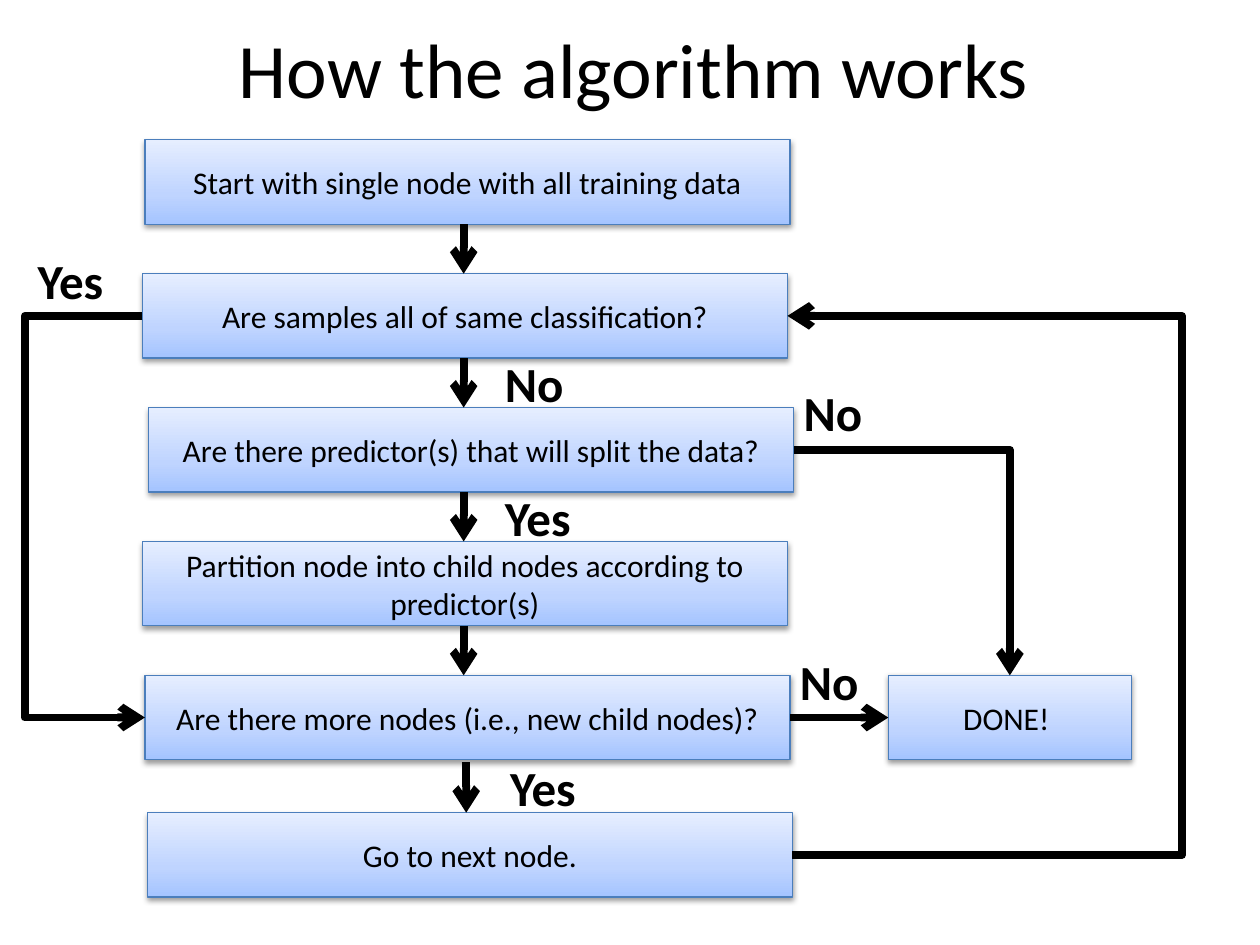
from typing import NamedTuple, Optional

from lxml.etree import SubElement
from pptx import Presentation
from pptx.dml.color import RGBColor
from pptx.enum.shapes import MSO_CONNECTOR, MSO_SHAPE
from pptx.enum.text import MSO_ANCHOR, MSO_AUTO_SIZE, PP_ALIGN
from pptx.oxml.ns import qn
from pptx.util import Inches, Pt

FONT = "Calibri"
BLACK = "000000"
BORDER = "4B7EBC"
GRADIENT = ((0, "A4C4FF"), (35, "BFD4FF"), (100, "E6EEFF"))
STEP_WIDTH, STEP_HEIGHT = 5.12, 0.67
FIRST_TOP, PITCH = 1.11, 1.0625
ARROW_X = 3.68
TOP, LEFT, BOTTOM, RIGHT = range(4)


class Step(NamedTuple):
    text: str
    left: float
    top: float
    width: float = STEP_WIDTH

    def side(self, site: int) -> tuple[float, float]:
        middle_x, middle_y = self.left + self.width / 2, self.top + STEP_HEIGHT / 2
        return ((middle_x, self.top), (self.left, middle_y),
                (middle_x, self.top + STEP_HEIGHT), (self.left + self.width, middle_y))[site]


class Answer(NamedTuple):
    text: str
    left: float
    top: float


class Route(NamedTuple):
    source: int
    source_side: int
    target: int
    target_side: int
    turn_x: Optional[float] = None  # None: a single corner


ROWS = [FIRST_TOP + PITCH * row for row in range(5)]
STEPS = [
    Step("Start with single node with all training data", 1.15, ROWS[0]),
    Step("Are samples all of same classification?", 1.13, ROWS[1]),
    Step("Are there predictor(s) that will split the data?", 1.18, ROWS[2]),
    Step("Partition node into child nodes according to predictor(s)", 1.13, ROWS[3]),
    Step("Are there more nodes (i.e., new child nodes)?", 1.15, ROWS[4]),
    Step("Go to next node.", 1.17, 6.45),
    Step("DONE! ", 7.05, ROWS[4], 1.93),
]
SAME_CLASS, SPLIT, MORE_NODES, NEXT_NODE, DONE = 1, 2, 4, 5, 6
ANSWERS = [
    Answer("Yes", 0.2, 1.94), Answer("No", 3.91, 2.76), Answer("No", 6.28, 2.99),
    Answer("Yes", 3.91, 3.82), Answer("No", 6.25, 5.12), Answer("Yes", 3.95, 5.96),
]
ROUTES = [
    Route(SAME_CLASS, LEFT, MORE_NODES, LEFT, 0.2),
    Route(SPLIT, RIGHT, DONE, TOP),
    Route(NEXT_NODE, RIGHT, SAME_CLASS, RIGHT, 9.37),
]


def color(value: str) -> RGBColor:
    return RGBColor.from_string(value)


def format_text(paragraph, size: float, bold: bool = False) -> None:
    for run in paragraph.runs:
        run.font.name, run.font.size, run.font.bold = FONT, Pt(size), bold
        run.font.color.rgb = color(BLACK)


def draw_step(slide, step: Step):
    box = slide.shapes.add_shape(MSO_SHAPE.RECTANGLE, Inches(step.left), Inches(step.top),
                                 Inches(step.width), Inches(STEP_HEIGHT))
    box.line.color.rgb = color(BORDER)
    box.line.width = Pt(0.75)

    # Three-stop gradient running upwards
    box.fill.gradient()
    box.fill.gradient_angle = 90
    stops = box.element.spPr.find(".//" + qn("a:gsLst"))
    stops.clear()
    for position, value in GRADIENT:
        stop = SubElement(stops, qn("a:gs"), pos=str(position * 1000))
        SubElement(stop, qn("a:srgbClr"), val=value)

    # Soft shadow below
    box.shadow.inherit = False
    effects = box.element.spPr.find(qn("a:effectLst"))
    shadow = SubElement(effects, qn("a:outerShdw"), blurRad=str(Pt(3.1)), dist=str(Pt(1.6)),
                        dir="5400000", rotWithShape="0")
    shade = SubElement(shadow, qn("a:srgbClr"), val=BLACK)
    SubElement(shade, qn("a:alpha"), val="38000")

    frame = box.text_frame
    frame.text = step.text
    frame.vertical_anchor = MSO_ANCHOR.MIDDLE
    frame.paragraphs[0].alignment = PP_ALIGN.CENTER
    format_text(frame.paragraphs[0], 18)
    return box


def draw_arrow(slide, start: tuple[float, float], end: tuple[float, float],
               kind=MSO_CONNECTOR.STRAIGHT):
    arrow = slide.shapes.add_connector(kind, *map(Inches, (*start, *end)))
    arrow.line.color.rgb = color(BLACK)
    arrow.line.width = Pt(4.5)
    properties = arrow.element.spPr
    SubElement(properties.find(qn("a:ln")), qn("a:tailEnd"), type="arrow")
    SubElement(properties, qn("a:effectLst"))
    return arrow


def draw_route(slide, route: Route, boxes: list) -> None:
    start = STEPS[route.source].side(route.source_side)
    end = STEPS[route.target].side(route.target_side)
    arrow = draw_arrow(slide, start, end, MSO_CONNECTOR.ELBOW)
    arrow.begin_connect(boxes[route.source], route.source_side)
    arrow.end_connect(boxes[route.target], route.target_side)
    geometry = arrow.element.spPr.find(qn("a:prstGeom"))
    if route.turn_x is None:
        geometry.set("prst", "bentConnector2")
        return
    # The turn is a share of the horizontal distance
    share = (route.turn_x - start[0]) / (end[0] - start[0])
    guides = geometry.find(qn("a:avLst"))
    SubElement(guides, qn("a:gd"), name="adj1", fmla=f"val {round(share * 100000)}")


def draw_answer(slide, answer: Answer) -> None:
    label = slide.shapes.add_textbox(Inches(answer.left), Inches(answer.top),
                                     Inches(0.93), Inches(0.57))
    frame = label.text_frame
    frame.word_wrap = True
    frame.auto_size = MSO_AUTO_SIZE.SHAPE_TO_FIT_TEXT
    frame.text = answer.text
    format_text(frame.paragraphs[0], 28, bold=True)


def main() -> None:
    deck = Presentation()
    deck.slide_width, deck.slide_height = Inches(10), Inches(7.5)
    slide = deck.slides.add_slide(deck.slide_layouts[5])

    # Title
    title = slide.shapes.title
    title.left, title.top = Inches(0.6), Inches(0)
    title.width, title.height = Inches(9), Inches(1.08)
    title.text_frame.text = "How the algorithm works "
    title.text_frame.vertical_anchor = MSO_ANCHOR.MIDDLE
    title.text_frame.paragraphs[0].alignment = PP_ALIGN.CENTER
    format_text(title.text_frame.paragraphs[0], 44)

    # Flowchart steps
    boxes = [draw_step(slide, step) for step in STEPS]

    # Arrows down the column
    for upper, lower in zip(ROWS, ROWS[1:]):
        draw_arrow(slide, (ARROW_X, upper + STEP_HEIGHT), (ARROW_X, lower))
    draw_arrow(slide, (3.7, 6.05), (3.7, STEPS[NEXT_NODE].top))

    # Exit to the end and bent routes
    finish = draw_arrow(slide, STEPS[MORE_NODES].side(RIGHT), STEPS[DONE].side(LEFT))
    finish.begin_connect(boxes[MORE_NODES], RIGHT)
    finish.end_connect(boxes[DONE], LEFT)
    for route in ROUTES:
        draw_route(slide, route, boxes)

    # Answers beside the arrows
    for answer in ANSWERS:
        draw_answer(slide, answer)

    deck.save("out.pptx")


if __name__ == "__main__":
    main()
